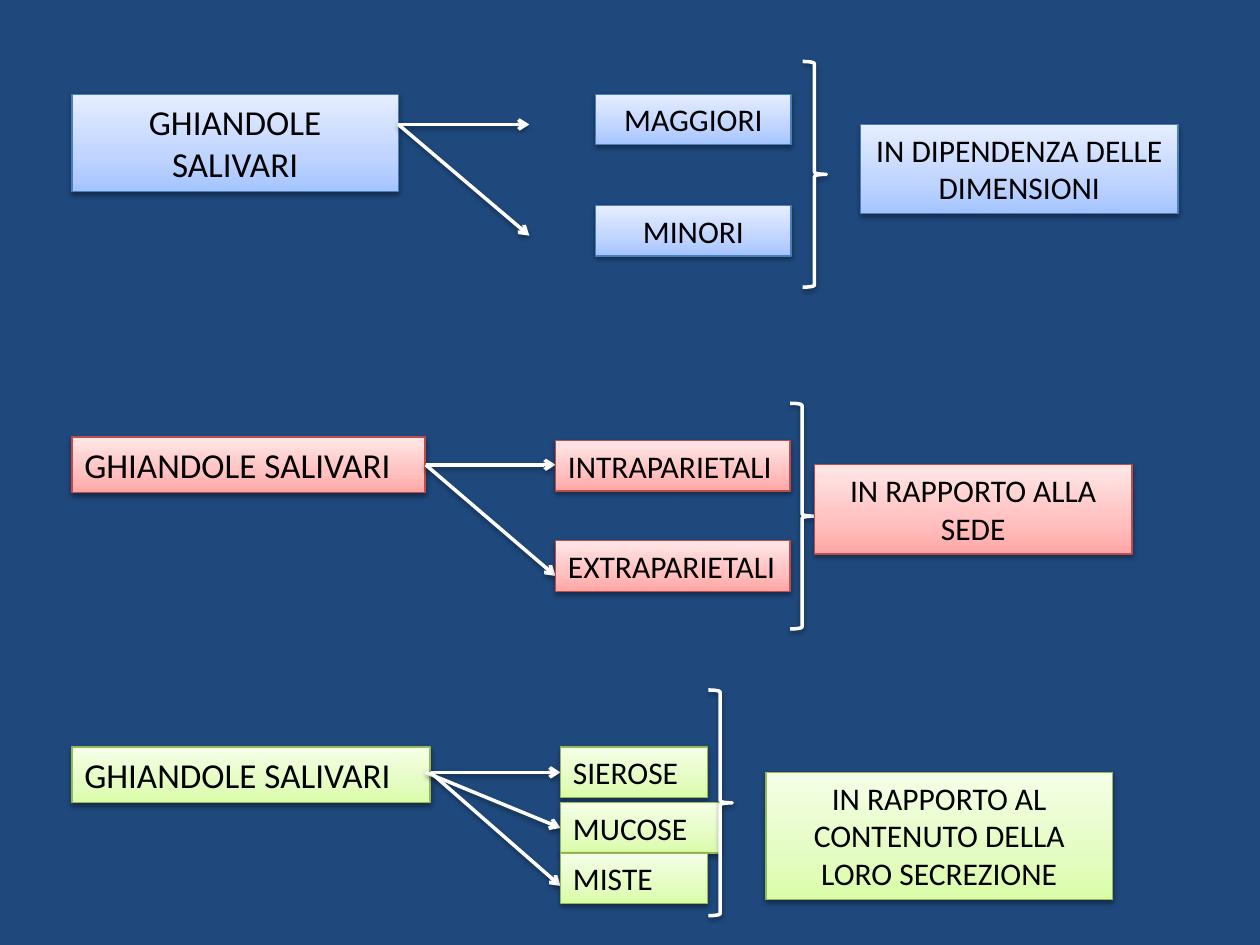
from lxml import etree
from pptx import Presentation
from pptx.dml.color import RGBColor
from pptx.enum.shapes import MSO_CONNECTOR, MSO_SHAPE
from pptx.enum.text import MSO_ANCHOR, MSO_AUTO_SIZE, PP_ALIGN
from pptx.oxml import parse_xml
from pptx.oxml.ns import nsdecls, qn
from pptx.util import Cm, Pt

NAVY = RGBColor(0x1F, 0x49, 0x7D)
WHITE = RGBColor(0xFF, 0xFF, 0xFF)
BLACK = RGBColor(0x00, 0x00, 0x00)

# Each palette: outline, then gradient colours from bottom to top
BLUE = (RGBColor(0x4B, 0x7E, 0xBC), RGBColor(0xA4, 0xC4, 0xFF),
        RGBColor(0xBF, 0xD4, 0xFF), RGBColor(0xE6, 0xEE, 0xFF))
RED = (RGBColor(0xBF, 0x4C, 0x48), RGBColor(0xFF, 0xA6, 0xA5),
       RGBColor(0xFF, 0xC0, 0xBF), RGBColor(0xFF, 0xE7, 0xE7))
GREEN = (RGBColor(0x98, 0xB9, 0x55), RGBColor(0xDA, 0xFD, 0xA7),
         RGBColor(0xE4, 0xFC, 0xC2), RGBColor(0xF5, 0xFF, 0xE7))

LEFT, CENTER = PP_ALIGN.LEFT, PP_ALIGN.CENTER


class Diagram:
    font = "Calibri"
    title_size, text_size = 20, 18
    stops = (0, 35, 100)
    row_h = 1.02
    brace_w, brace_h = 0.48, 4.55

    def __init__(self, slide):
        self.s = slide
        bg = slide.background.fill
        bg.solid()
        bg.fore_color.rgb = NAVY

    def shadow(self, shape):
        sp_pr = shape._element.spPr
        for old in sp_pr.findall(qn("a:effectLst")):
            sp_pr.remove(old)
        sp_pr.append(parse_xml(
            f'<a:effectLst {nsdecls("a")}><a:outerShdw blurRad="40000" '
            'dist="20000" dir="5400000" rotWithShape="0">'
            '<a:srgbClr val="000000"><a:alpha val="38000"/></a:srgbClr>'
            '</a:outerShdw></a:effectLst>'))

    def gradient(self, shape, colors):
        shape.fill.gradient()
        grad = shape._element.spPr.find(qn("a:gradFill"))
        for child in list(grad):
            grad.remove(child)
        stops = etree.SubElement(grad, qn("a:gsLst"))
        for pos, color in zip(self.stops, colors):
            gs = etree.SubElement(stops, qn("a:gs"), pos=str(pos * 1000))
            etree.SubElement(gs, qn("a:srgbClr"), val=str(color))
        etree.SubElement(grad, qn("a:lin"), ang="16200000", scaled="0")

    def box(self, text, x, y, w, h, palette, size=text_size, align=CENTER):
        sp = self.s.shapes.add_shape(MSO_SHAPE.RECTANGLE, Cm(x), Cm(y), Cm(w), Cm(h))
        self.gradient(sp, palette[1:])
        sp.line.color.rgb = palette[0]
        sp.line.width = Pt(0.75)
        self.shadow(sp)
        tf = sp.text_frame
        tf.text = text
        tf.word_wrap = True
        tf.auto_size = MSO_AUTO_SIZE.SHAPE_TO_FIT_TEXT
        tf.vertical_anchor = MSO_ANCHOR.TOP
        p = tf.paragraphs[0]
        p.alignment = align
        f = p.runs[0].font
        f.name, f.size, f.color.rgb = self.font, Pt(size), BLACK

    def title(self, y, w, h, palette, align=LEFT):
        self.box("GHIANDOLE SALIVARI", 1.45, y, w, h, palette, self.title_size, align)

    def arrow(self, x1, y1, x2, y2):
        c = self.s.shapes.add_connector(
            MSO_CONNECTOR.STRAIGHT, Cm(x1), Cm(y1), Cm(x2), Cm(y2))
        c.line.color.rgb = WHITE
        c.line.width = Pt(2)
        etree.SubElement(c.line._get_or_add_ln(), qn("a:tailEnd"), type="arrow")
        self.shadow(c)

    def brace(self, x, y):
        sp = self.s.shapes.add_shape(
            MSO_SHAPE.RIGHT_BRACE, Cm(x), Cm(y), Cm(self.brace_w), Cm(self.brace_h))
        sp.fill.background()
        sp.line.color.rgb = WHITE
        sp.line.width = Pt(2)
        self.shadow(sp)


def main():
    prs = Presentation()
    prs.slide_width, prs.slide_height = Cm(25.4), Cm(19.05)
    d = Diagram(prs.slides.add_slide(prs.slide_layouts[6]))

    # By size
    d.title(1.9, 6.58, 1.96, BLUE, CENTER)
    for y in (2.51, 4.75):
        d.arrow(8.03, 2.51, 10.67, y)
    for text, y in (("MAGGIORI", 1.9), ("MINORI", 4.14)):
        d.box(text, 12.01, y, 3.94, d.row_h, BLUE)
    d.brace(16.18, 1.24)
    d.box("IN DIPENDENZA DELLE DIMENSIONI", 17.35, 2.51, 6.4, 1.8, BLUE)

    # By site
    d.title(8.81, 7.12, 1.12, RED)
    for y in (9.37, 11.61):
        d.arrow(8.58, 9.37, 11.2, y)
    for text, y in (("INTRAPARIETALI", 8.88), ("EXTRAPARIETALI", 10.9)):
        d.box(text, 11.2, y, 4.73, d.row_h, RED, align=LEFT)
    d.brace(15.93, 8.13)
    d.box("IN RAPPORTO ALLA SEDE", 16.42, 9.37, 6.4, 1.8, RED)

    # By secretion
    d.title(15.06, 7.22, 1.12, GREEN)
    for x, y in ((8.68, 15.57), (8.58, 16.69), (8.68, 17.86)):
        d.arrow(x, 15.57, 11.3, y)
    for text, y, w in (("SIEROSE", 15.06, 2.97), ("MUCOSE", 16.18, 3.2),
                       ("MISTE", 17.2, 2.97)):
        d.box(text, 11.3, y, w, d.row_h, GREEN, align=LEFT)
    d.brace(14.28, 13.91)
    d.box("IN RAPPORTO AL CONTENUTO DELLA LORO SECREZIONE",
          15.44, 15.57, 6.99, 2.57, GREEN)

    prs.save("out.pptx")


if __name__ == "__main__":
    main()
